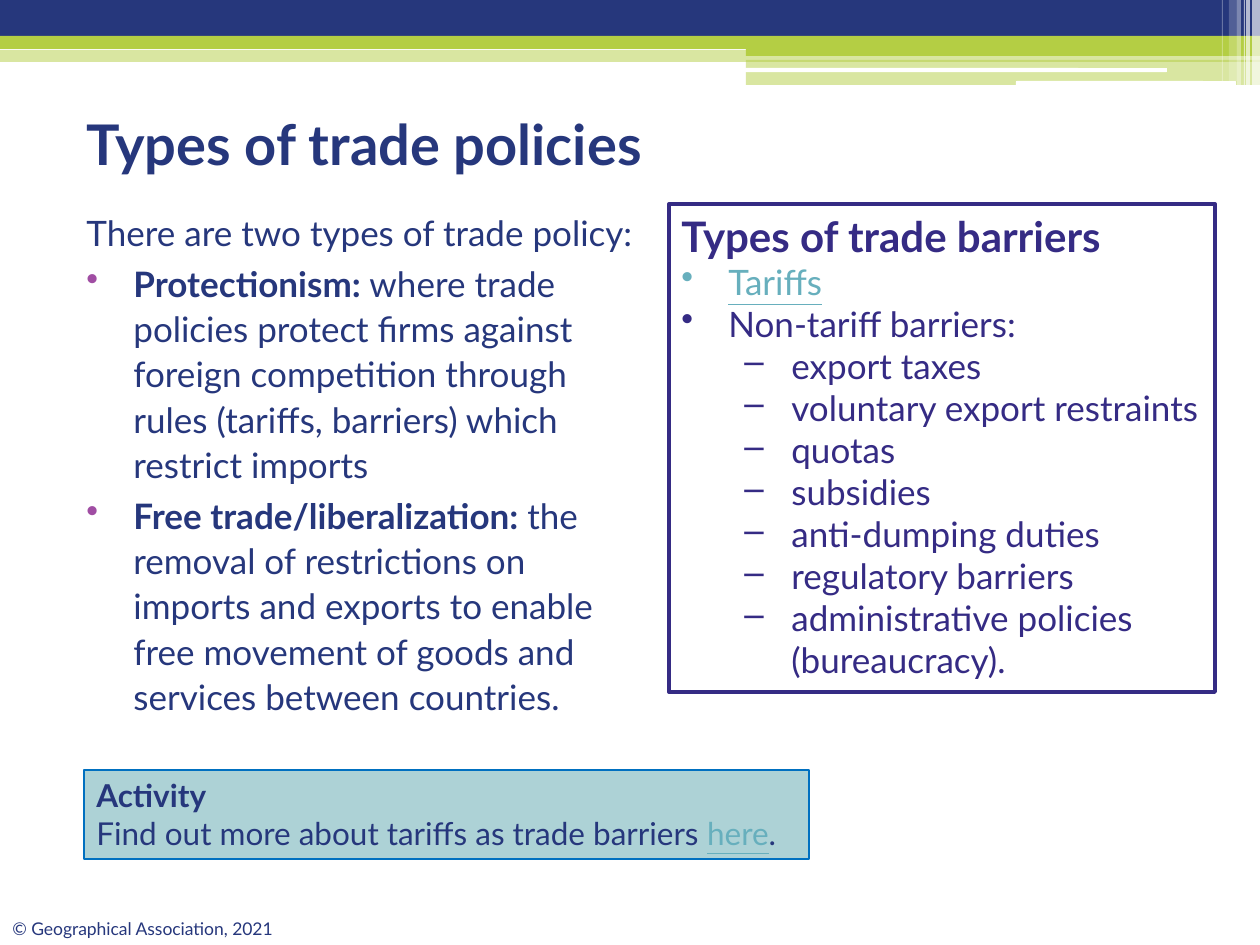
"""Build a slide on the types of trade policies and trade barriers."""
from lxml import etree
from pptx import Presentation, util as u
from pptx.dml.color import RGBColor
from pptx.enum import shapes, text
from pptx.oxml.ns import qn

NAVY = RGBColor(0x26, 0x37, 0x7C)
GREEN = RGBColor(0xB4, 0xCE, 0x44)
WHITE = RGBColor(0xFF, 0xFF, 0xFF)
INDIGO = RGBColor(0x35, 0x2B, 0x84)
TEAL = RGBColor(0x67, 0xAF, 0xBD)
PALE_TEAL = RGBColor(0xAD, 0xD2, 0xD6)
BLUE = RGBColor(0x00, 0x70, 0xC0)
PURPLE = RGBColor(0xA0, 0x4D, 0xA3)

RECT = shapes.MSO_SHAPE.RECTANGLE
ROUND = shapes.MSO_SHAPE.ROUNDED_RECTANGLE
BOLD = {"bold": True}
LINK = {"color": TEAL, "underline": True}


class Deck:
    font = "Lato"
    scale = u.Inches(1) / 126

    def __init__(self, width, height):
        self.prs = Presentation()
        self.prs.slide_width = self.px(width)
        self.prs.slide_height = self.px(height)
        self.s = self.prs.slides.add_slide(self.prs.slide_layouts[6])

    def px(self, n):
        return u.Emu(round(n * self.scale))

    def box(self, at, fill=None, alpha=100, line=None, weight=1, kind=RECT):
        sp = self.s.shapes.add_shape(kind, *map(self.px, at))
        sp.shadow.inherit = False
        if fill is None:
            sp.fill.background()
        else:
            sp.fill.solid()
            sp.fill.fore_color.rgb = fill
            if alpha < 100:
                clr = sp.element.spPr.find(".//" + qn("a:srgbClr"))
                etree.SubElement(clr, qn("a:alpha"), val=str(alpha * 1000))
        if line is None:
            sp.line.fill.background()
        else:
            sp.line.color.rgb = line
            sp.line.width = u.Pt(weight)
        return sp

    def label(self, at, paragraphs, size, color, **options):
        sp = self.s.shapes.add_textbox(*map(self.px, at))
        self.fill_text(sp, paragraphs, size, color, **options)

    def fill_text(self, sp, paragraphs, size, color, anchor=text.MSO_ANCHOR.TOP,
                  grow=False, spacing=None, before=0):
        tf = sp.text_frame
        tf.word_wrap = True
        tf.vertical_anchor = anchor
        if grow:
            tf.auto_size = text.MSO_AUTO_SIZE.SHAPE_TO_FIT_TEXT
        for i, (runs, style) in enumerate(paragraphs):
            p = tf.add_paragraph() if i else tf.paragraphs[0]
            p.alignment = text.PP_ALIGN.LEFT
            if spacing:
                p.line_spacing = spacing
            if i and before:
                p.space_before = u.Pt(before)
            if "bullet" in style:
                self.bullet(p, **style)
            for words, look in runs:
                self.run(p, words, **{"size": size, "color": color, **look})

    def bullet(self, p, bullet, level=0, bullet_color=None):
        p.level = level
        pPr = p._p.get_or_add_pPr()
        pPr.set("marL", str(self.px(47 + 63 * level)))
        pPr.set("indent", str(-self.px(47)))
        if bullet_color is not None:
            clr = etree.SubElement(pPr, qn("a:buClr"))
            etree.SubElement(clr, qn("a:srgbClr"), val=str(bullet_color))
        etree.SubElement(pPr, qn("a:buChar"), char=bullet)

    def run(self, p, words, size, color, bold=False, underline=False):
        r = p.add_run()
        r.text = words
        r.font.name = self.font
        r.font.size = u.Pt(size)
        r.font.color.rgb = color
        r.font.bold = bold
        r.font.underline = underline


def draw_header(deck):
    deck.box((0, 50, 1260, 12), GREEN, 50)
    deck.box((0, 0, 1260, 43), NAVY)
    deck.box((0, 36, 1260, 13), GREEN)
    deck.box((746, 43, 514, 13), GREEN)
    deck.box((746, 60, 514, 25), GREEN, 50)
    deck.box((745, 68, 422, 4), WHITE, kind=ROUND)
    deck.box((1016, 81, 220, 5), WHITE, kind=ROUND)
    stripes = [(1252, 8, 85, 65), (1246, 4, 85, 65), (1244, 1, 85, 60),
               (1237, 4, 85, 40), (1229, 8, 81, 20), (1222, 1, 81, 30)]
    for x, width, height, alpha in stripes:
        deck.box((x, 0, width, height), WHITE, alpha)


def draw_policies(deck):
    policies = [
        ("Protectionism: ", "where trade policies protect firms against foreign "
         "competition through rules (tariffs, barriers) which restrict imports"),
        ("Free trade/liberalization: ", "the removal of restrictions on imports and "
         "exports to enable free movement of goods and services between countries."),
    ]
    style = {"bullet": "•", "bullet_color": PURPLE}
    paragraphs = [([("There are two types of trade policy:", {})], {})]
    paragraphs += [([(name, BOLD), (meaning, {})], style) for name, meaning in policies]
    deck.label((74, 202, 575, 558), paragraphs, 20, NAVY, spacing=1.08, before=3)


def draw_barriers(deck):
    barriers = ["export taxes", "voluntary export restraints", "quotas", "subsidies",
                "anti-dumping duties", "regulatory barriers",
                "administrative policies (bureaucracy)."]
    paragraphs = [
        ([("Types of trade barriers", {"size": 24, "bold": True})], {}),
        ([("Tariffs", LINK)], {"bullet": "•"}),
        ([("Non-tariff barriers:", {})], {"bullet": "•"}),
    ]
    paragraphs += [([(b, {})], {"bullet": "–", "level": 1}) for b in barriers]
    sp = deck.box((669, 204, 546, 488), line=INDIGO, weight=2.25)
    deck.fill_text(sp, paragraphs, 20, INDIGO, grow=True)


def draw_activity(deck):
    sp = deck.box((84, 770, 725, 89), PALE_TEAL, line=BLUE, weight=0.75)
    paragraphs = [
        ([("Activity", BOLD)], {}),
        ([("Find out more about tariffs as trade barriers ", {}),
          ("here", LINK), (".", {})], {}),
    ]
    deck.fill_text(sp, paragraphs, 18, NAVY, grow=True)


def main():
    deck = Deck(1260, 945)
    draw_header(deck)
    deck.label((0, 912, 362, 34), [([("© Geographical Association, 2021", {})], {})],
               10, NAVY, grow=True)
    deck.label((74, 88, 1071, 110), [([("Types of trade policies", BOLD)], {})],
               32, NAVY, anchor=text.MSO_ANCHOR.MIDDLE)
    draw_policies(deck)
    draw_barriers(deck)
    draw_activity(deck)
    deck.prs.save("out.pptx")


if __name__ == "__main__":
    main()
